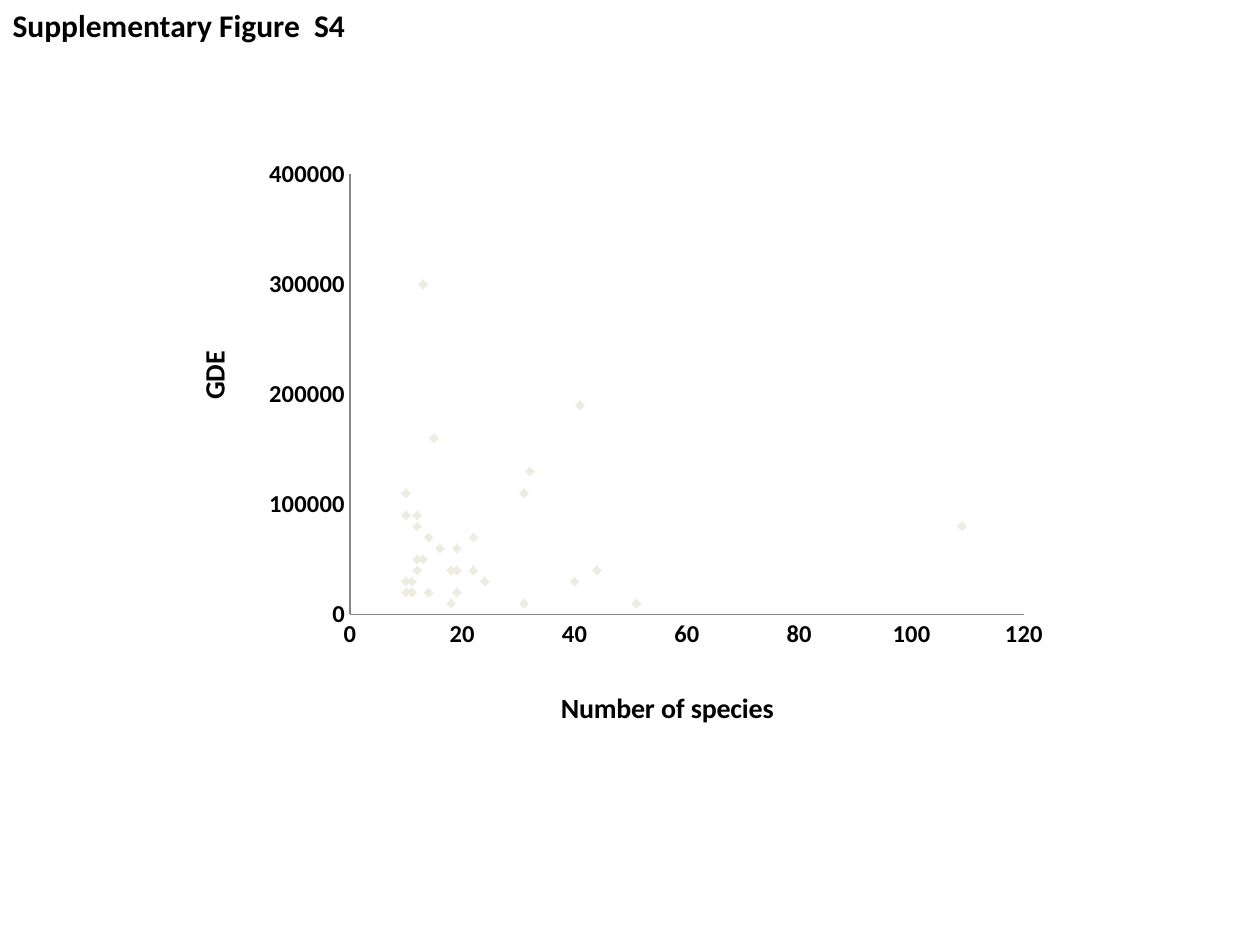
from pptx import Presentation
from pptx.chart.data import XyChartData
from pptx.dml.color import RGBColor
from pptx.enum.chart import XL_CHART_TYPE, XL_MARKER_STYLE, XL_TICK_MARK
from pptx.enum.text import MSO_ANCHOR, MSO_AUTO_SIZE, PP_ALIGN
from pptx.oxml import parse_xml
from pptx.oxml.ns import nsdecls, qn
from pptx.util import Emu, Pt

BLACK = RGBColor(0x00, 0x00, 0x00)
AXIS_GRAY = RGBColor(0x86, 0x86, 0x86)
MARKER_CREAM = RGBColor(0xEE, 0xEC, 0xE1)
FONT = "Calibri"
CHART_WIDTH, CHART_HEIGHT = 882, 588


def px(length):
    return Emu(round(length * 914400 / 126))


def layout_xml(target="", **lengths):
    """Manual chart layout from px lengths inside the chart frame."""
    inner = f'<c:layoutTarget val="{target}"/>' if target else ""
    inner += '<c:xMode val="edge"/><c:yMode val="edge"/>'
    for key, length in lengths.items():
        whole = CHART_WIDTH if key in "xw" else CHART_HEIGHT
        inner += f'<c:{key} val="{length / whole}"/>'
    return parse_xml(f'<c:layout {nsdecls("c")}><c:manualLayout>{inner}</c:manualLayout></c:layout>')


presentation = Presentation()
presentation.slide_width, presentation.slide_height = px(1260), px(945)
slide = presentation.slides.add_slide(presentation.slide_layouts[5])

# Heading
heading = slide.shapes.title
heading.left, heading.top, heading.width, heading.height = px(0), px(0), px(360), px(50)
frame = heading.text_frame
frame.word_wrap = False
frame.auto_size = MSO_AUTO_SIZE.SHAPE_TO_FIT_TEXT
frame.vertical_anchor = MSO_ANCHOR.TOP
paragraph = frame.paragraphs[0]
paragraph.alignment = PP_ALIGN.LEFT
run = paragraph.add_run()
run.text = "Supplementary Figure  S4"
run.font.name, run.font.size, run.font.bold = FONT, Pt(18), True
run.font.color.rgb = BLACK

# Points: number of species, GDE in ten thousands
points = [
    (109, 8), (11, 3), (22, 7), (22, 4), (16, 6), (31, 11), (24, 3),
    (44, 4), (19, 2), (32, 13), (11, 2), (40, 3), (51, 1), (41, 19),
    (10, 2), (15, 16), (12, 9), (12, 4), (10, 9), (13, 30), (12, 8),
    (12, 5), (11, 2), (10, 3), (31, 1), (14, 2), (19, 6), (13, 5),
    (19, 4), (18, 4), (18, 1), (11, 2), (14, 7), (11, 2), (10, 11),
]
chart_data = XyChartData()
data_series = chart_data.add_series("Series 1")
for species, ten_thousands in points:
    data_series.add_data_point(species, ten_thousands * 10000)

# Scatter chart
chart = slide.shapes.add_chart(
    XL_CHART_TYPE.XY_SCATTER, px(179), px(147), px(CHART_WIDTH), px(CHART_HEIGHT), chart_data
).chart
chart.has_legend = False
chart.has_title = False
chart.font.name, chart.font.size = FONT, Pt(10)
chart.font.color.rgb = BLACK
plot = chart.plots[0]
plot.vary_by_categories = False
series = plot.series[0]
series.smooth = False
series.format.line.fill.background()
series.marker.style, series.marker.size = XL_MARKER_STYLE.DIAMOND, 5
series.marker.format.fill.solid()
series.marker.format.fill.fore_color.rgb = MARKER_CREAM
series.marker.format.line.color.rgb = MARKER_CREAM

# Plot area position
plot_area = chart._chartSpace.chart.plotArea
for old_layout in plot_area.findall(qn("c:layout")):
    plot_area.remove(old_layout)
plot_area.insert(0, layout_xml("inner", x=171, y=27, w=674, h=442))

# Axes with titles
axes = [
    (chart.category_axis, "Number of species ", 120, 20, 0, (377, 539)),
    (chart.value_axis, "GDE", 400000, 100000, -5400000, (11, 200)),
]
for axis, label, maximum, step, rotation, (left, top) in axes:
    axis.minimum_scale, axis.maximum_scale, axis.major_unit = 0, maximum, step
    axis.has_major_gridlines = False
    axis.major_tick_mark = axis.minor_tick_mark = XL_TICK_MARK.NONE
    axis.format.line.color.rgb = AXIS_GRAY
    axis.format.line.width = Pt(0.75)
    axis.tick_labels.number_format = "General"
    axis.tick_labels.number_format_is_linked = False
    font = axis.tick_labels.font
    font.name, font.size, font.bold = FONT, Pt(14), True
    font.color.rgb = BLACK

    title_frame = axis.axis_title.text_frame
    run = title_frame.paragraphs[0].add_run()
    run.text = label
    run.font.name, run.font.size, run.font.bold = FONT, Pt(16), True
    run.font.color.rgb = BLACK
    body = title_frame._txBody.find(qn("a:bodyPr"))
    body.set("rot", str(rotation))
    body.set("vert", "horz")
    title = axis.axis_title._element
    for old_layout in title.findall(qn("c:layout")):
        title.remove(old_layout)
    title.find(qn("c:tx")).addnext(layout_xml(x=left, y=top))

presentation.save("out.pptx")
